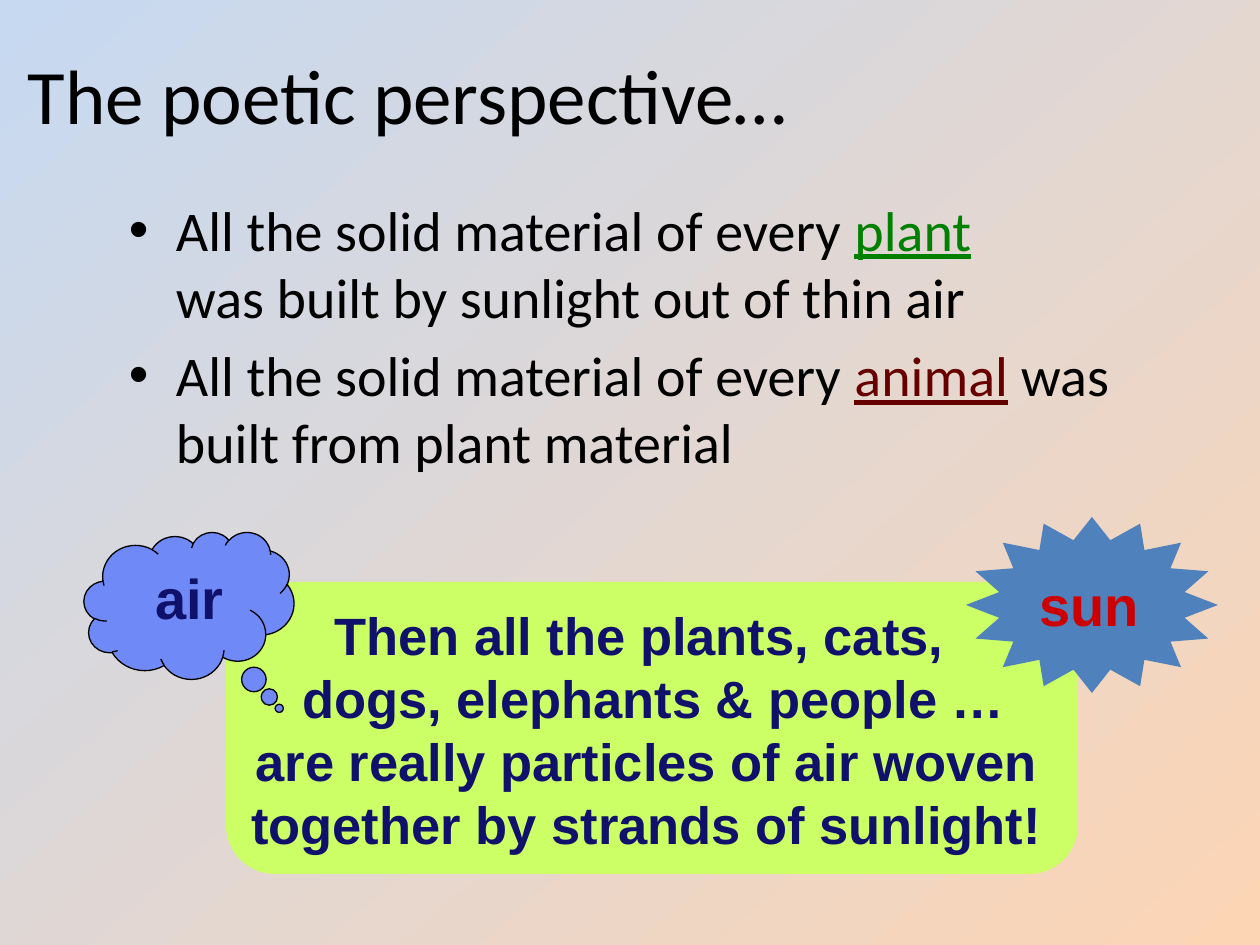
from pptx import Presentation
from pptx.dml.color import RGBColor
from pptx.enum.shapes import MSO_SHAPE
from pptx.enum.text import MSO_ANCHOR, PP_ALIGN
from pptx.oxml.xmlchemy import OxmlElement
from pptx.util import Emu, Pt

PX = 914400 / 126
ROUNDED, STAR, CLOUD = (MSO_SHAPE.ROUNDED_RECTANGLE, MSO_SHAPE.STAR_16_POINT,
                        MSO_SHAPE.CLOUD_CALLOUT)
TOP, MIDDLE = MSO_ANCHOR.TOP, MSO_ANCHOR.MIDDLE
LEFT, CENTER = PP_ALIGN.LEFT, PP_ALIGN.CENTER
COLORS = {
    "peach": "FCD5B5", "sky": "C6D9F1", "black": "000000", "plant": "008000",
    "animal": "660000", "lime": "CCFF66", "navy": "0F116A", "star": "4F81BD",
    "sun": "CC0000", "cloud": "6F89F7",
}
TITLE = {"name": "Calibri", "size": Pt(44)}
BODY = {"name": "Calibri", "size": Pt(32)}
LABEL = {"name": "Arial", "size": Pt(32), "bold": True}
MESSAGE = {"name": "Arial", "size": Pt(30), "bold": True}


def emu(px):
    return Emu(round(px * PX))


def color(name):
    return RGBColor.from_string(COLORS[name])


def inner(box, left, top, width, height):
    """Turn a box relative to another one into a box on the page."""
    return box[0] + left, box[1] + top, width, height


def add_text_frame(page, box, insets, anchor, wrap=True):
    frame = page.shapes.add_textbox(*map(emu, box)).text_frame
    frame.word_wrap = wrap
    frame.vertical_anchor = anchor
    for side, inset in zip(("left", "top", "right", "bottom"), insets):
        setattr(frame, f"margin_{side}", emu(inset))
    return frame


def add_span(para, text, font, color_name, underline=False):
    """Add text in one format; a newline becomes a line break."""
    for number, line in enumerate(text.split("\n")):
        if number:
            para.add_line_break()
        span = para.add_run()
        span.text = line
        for key, value in {**font, "underline": underline}.items():
            setattr(span.font, key, value)
        span.font.color.rgb = color(color_name)


def add_figure(page, kind, box, fill, line=None, adjustments=()):
    shape = page.shapes.add_shape(kind, *map(emu, box))
    shape.shadow.inherit = False
    shape.fill.solid()
    shape.fill.fore_color.rgb = color(fill)
    if line:
        shape.line.color.rgb = color(line)
        shape.line.width = Pt(0.75)
    else:
        shape.line.fill.background()
    for index, value in enumerate(adjustments):
        shape.adjustments[index] = value


def add_centered_text(page, box, insets, text, font, color_name, wrap):
    para = add_text_frame(page, box, insets, MIDDLE, wrap).paragraphs[0]
    para.alignment = CENTER
    add_span(para, text, font, color_name)


def paint_background(page):
    fill = page.background.fill
    fill.gradient()
    fill.gradient_angle = 131
    for stop, name in zip(fill.gradient_stops, ("peach", "sky")):
        stop.color.rgb = color(name)


def add_title(page, box):
    para = add_text_frame(page, box, (13, 6, 18, 6), MIDDLE).paragraphs[0]
    para.alignment = LEFT
    add_span(para, "The poetic perspective…", TITLE, "black")


def add_bullets(page, box):
    frame = add_text_frame(page, box, (13, 6, 18, 6), TOP)
    items = (("plant", " \nwas built by sunlight out of thin air"),
             ("animal", " was built from plant material"))
    for number, (subject, ending) in enumerate(items):
        para = frame.add_paragraph() if number else frame.paragraphs[0]
        para.space_before = Pt(6.4)
        props = para._p.get_or_add_pPr()
        props.set("marL", str(emu(47)))
        props.set("indent", str(emu(-47)))
        for tag, key, value in (("a:buFont", "typeface", "Arial"),
                                ("a:buChar", "char", "•")):
            bullet = OxmlElement(tag)
            bullet.set(key, value)
            props.append(bullet)
        add_span(para, "All the solid material of every ", BODY, "black")
        add_span(para, subject, BODY, subject, underline=True)
        add_span(para, ending, BODY, "black")


def add_message(page, box):
    add_figure(page, ROUNDED, box, "lime", adjustments=(0.167,))
    text = ("Then all the plants, cats, \n dogs, elephants & people …\n"
            "are really particles of air woven together by strands of sunlight!")
    add_centered_text(page, inner(box, 13, 23, 823, 247), (5, 5, 13, 5),
                      text, MESSAGE, "navy", True)


def add_sun(page, box):
    add_figure(page, STAR, box, "star", adjustments=(0.375,))
    add_centered_text(page, inner(box, 68, 51, 116, 73), (5, 5, 10, 5),
                      "sun", LABEL, "sun", False)


def add_air(page, box):
    add_figure(page, CLOUD, box, "cloud", "black", (0.43, 0.7))
    add_centered_text(page, inner(box, 61, 27, 89, 77), (5, 0, 5, 0),
                      "air", LABEL, "navy", False)


def main():
    deck = Presentation()
    deck.slide_width, deck.slide_height = emu(1260), emu(945)
    page = deck.slides.add_slide(deck.slide_layouts[6])
    paint_background(page)
    add_title(page, (15, 15, 1134, 158))
    add_bullets(page, (116, 189, 1071, 347))
    add_message(page, (226, 582, 852, 292))
    add_sun(page, (966, 517, 252, 176))
    add_air(page, (84, 532, 210, 147))
    deck.save("out.pptx")


if __name__ == "__main__":
    main()
